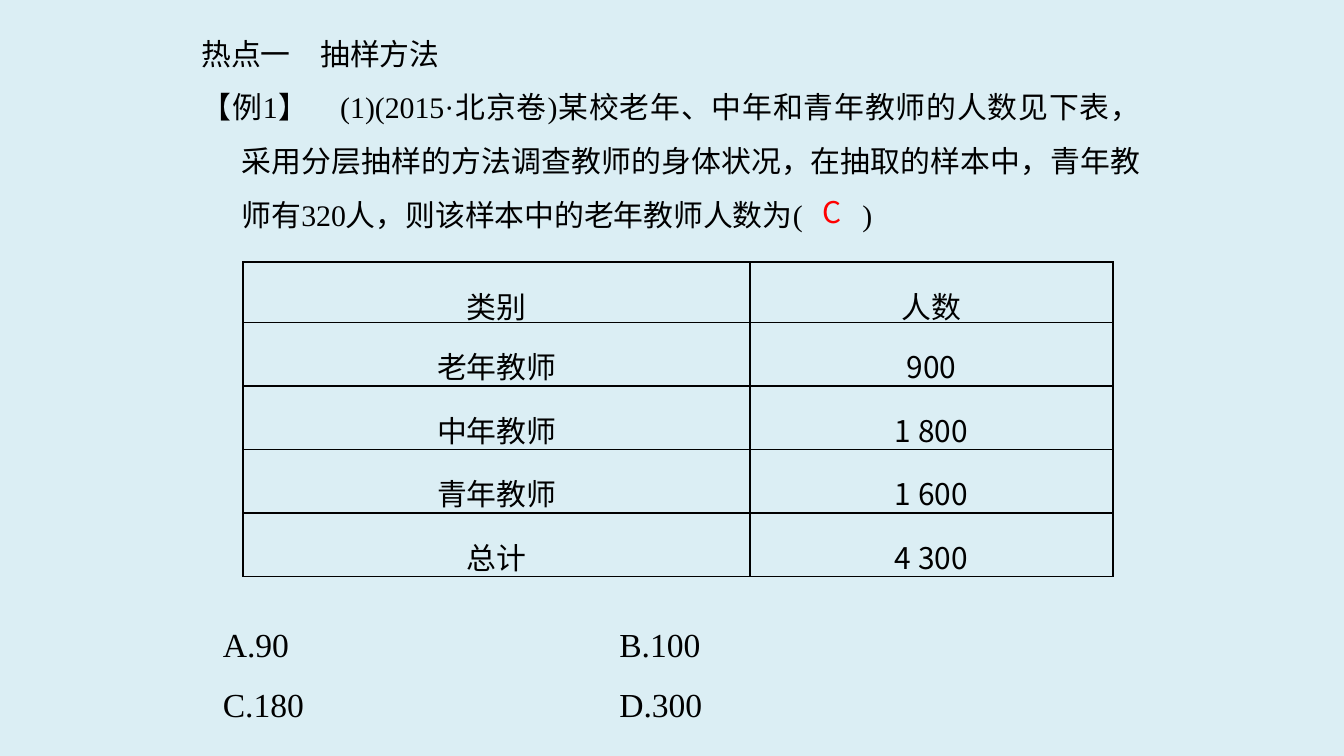
from pptx import Presentation
from pptx.dml.color import RGBColor
from pptx.enum.text import MSO_AUTO_SIZE as AutoSize, MSO_VERTICAL_ANCHOR as Anchor, PP_ALIGN as Align
from pptx.oxml import parse_xml
from pptx.oxml.ns import nsdecls
from pptx.util import Inches, Pt

COLORS = {"background": "DBEEF4", "ink": "000000", "answer": "FF0000"}
LATIN = "Times New Roman"
CJK = "Noto Sans CJK SC"
QUESTION = [
    "热点一　抽样方法",
    "【例1】　(1)(2015·北京卷)某校老年、中年和青年教师的人数见下表，"
    "采用分层抽样的方法调查教师的身体状况，在抽取的样本中，青年教师有320人，"
    "则该样本中的老年教师人数为(　　)",
]
TEACHERS = [
    ("类别", "人数"),
    ("老年教师", "900"),
    ("中年教师", "1 800"),
    ("青年教师", "1 600"),
    ("总计", "4 300"),
]
CHOICES = ["A.90\tB.100", "C.180\tD.300"]


def drawing_xml(tag, attributes="", content=""):
    """Return one element of the drawing namespace."""
    return parse_xml(f"<a:{tag} {nsdecls('a')} {attributes}>{content}</a:{tag}>")


def write(paragraph, text, align, size=16, font=CJK, color="ink"):
    """Add one styled run to a paragraph with wide line spacing."""
    paragraph.alignment = align
    paragraph.line_spacing = 1.5
    run = paragraph.add_run()
    run.text = text
    run.font.size = Pt(size)
    run.font.name = font
    run.font.color.rgb = RGBColor.from_string(COLORS[color])
    run.font._element.append(drawing_xml("ea", f'typeface="{CJK}"'))


def add_text(slide, box, lines, hanging=False, wrap=True, **style):
    """Place justified lines in a text box that grows with its text."""
    frame = slide.shapes.add_textbox(*map(Inches, box)).text_frame
    frame.word_wrap = wrap
    frame.auto_size = AutoSize.SHAPE_TO_FIT_TEXT
    for index, line in enumerate(lines):
        paragraph = frame.paragraphs[0] if index == 0 else frame.add_paragraph()
        write(paragraph, line, Align.JUSTIFY, **style)
        properties = paragraph._p.get_or_add_pPr()
        if hanging:
            properties.set("marL", str(Inches(0.3)))
            properties.set("indent", str(Inches(-0.5)))
        stop = f'<a:tab pos="{Inches(2.95)}" algn="l"/>'
        properties.append(drawing_xml("tabLst", content=stop))


def outline(cell):
    """Draw a thin line on each side of a cell."""
    line_fill = f'<a:solidFill><a:srgbClr val="{COLORS["ink"]}"/></a:solidFill>'
    for position, side in enumerate("LRTB"):
        border = drawing_xml(f"ln{side}", f'w="{Pt(1)}"', line_fill)
        cell._tc.get_or_add_tcPr().insert(position, border)


def add_teacher_table(slide):
    """Add the table of teacher numbers by age group."""
    height, header_height = Inches(2.34), Inches(0.45)
    body_height = (height - header_height) // (len(TEACHERS) - 1)
    frame = slide.shapes.add_table(
        len(TEACHERS), 2, Inches(1.81), Inches(1.95), Inches(6.47), height)
    table = frame.table
    table.first_row = table.horz_banding = False
    for column, width in zip(table.columns, (3.77, 2.7)):
        column.width = Inches(width)
    for row_index, entries in enumerate(TEACHERS):
        table.rows[row_index].height = body_height if row_index else header_height
        for column_index, entry in enumerate(entries):
            cell = table.cell(row_index, column_index)
            cell.fill.background()
            cell.vertical_anchor = Anchor.MIDDLE
            cell.margin_left = cell.margin_right = Inches(0.04)
            cell.margin_top = cell.margin_bottom = 0
            write(cell.text_frame.paragraphs[0], entry, Align.CENTER)
            outline(cell)


def main():
    """Build the sampling question slide and save it."""
    deck = Presentation()
    deck.slide_width = Inches(10)
    deck.slide_height = deck.slide_width * 9 // 16
    slide = deck.slides.add_slide(deck.slide_layouts[6])
    backdrop = slide.background.fill
    backdrop.solid()
    backdrop.fore_color.rgb = RGBColor.from_string(COLORS["background"])
    add_text(slide, (1.4, 0.08, 7.19, 1.72), QUESTION, hanging=True, font=LATIN)
    add_teacher_table(slide)
    add_text(slide, (1.56, 4.44, 5, 0.96), CHOICES, size=18, font=LATIN)
    add_text(slide, (6.02, 1.26, 0.35, 0.46), ["C"], wrap=False, color="answer")
    deck.save("out.pptx")


if __name__ == "__main__":
    main()
